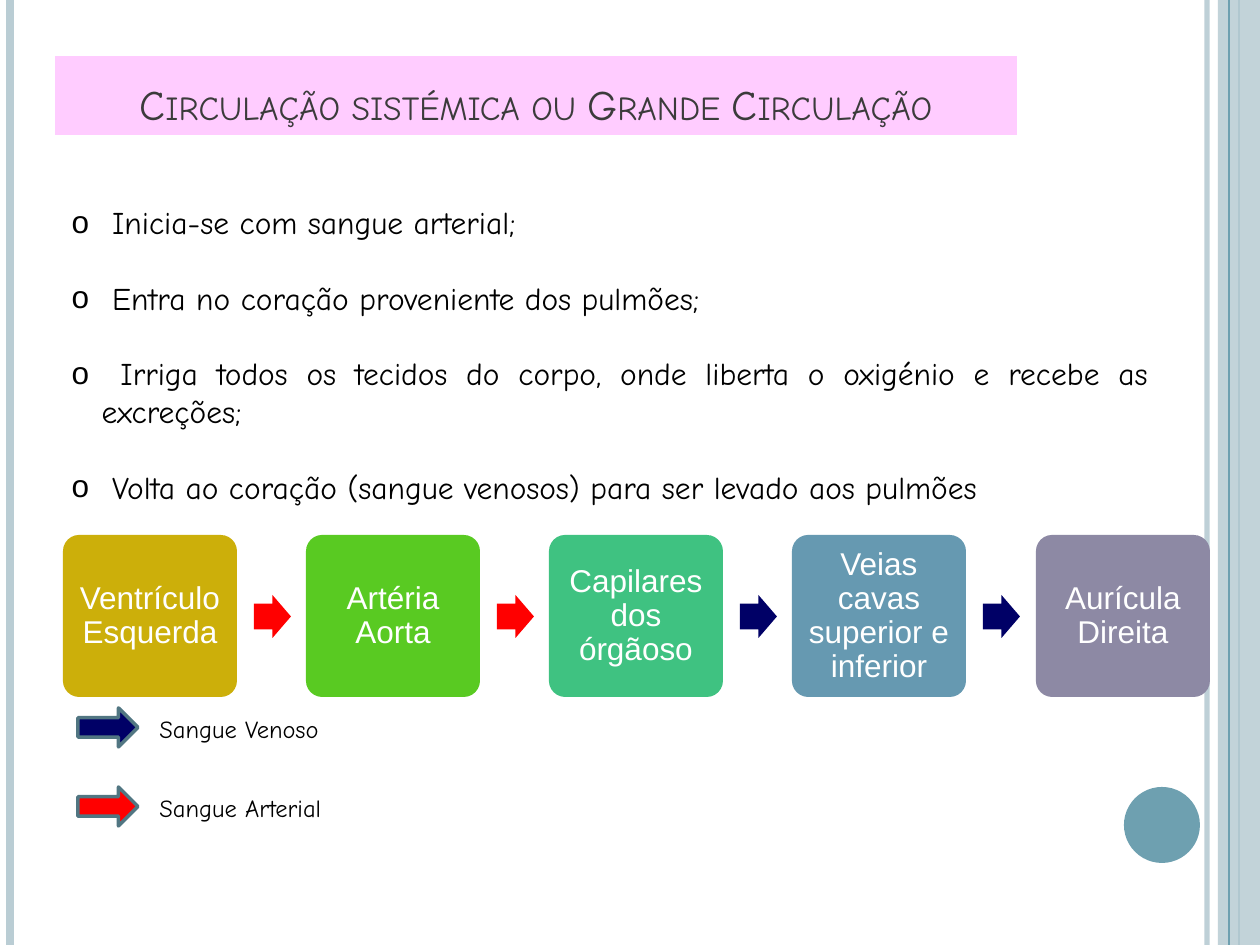
"""Build the slide on the systemic circulation."""
import dataclasses

import lxml.etree
import pptx
import pptx.dml.color
import pptx.enum.shapes
import pptx.enum.text
import pptx.oxml.ns
import pptx.util

EMU_PER_PX = 914400 / 126
SLIDE_W, SLIDE_H = 1260, 945
COLORS = {
    "pale": "BACDD4", "teal": "6EA0B0", "pink": "FFCCFF", "title": "3B3B3B",
    "black": "000000", "white": "FFFFFF", "outline": "517682",
    "arterial": "FF0000", "venous": "000066",
    "ventricle": "CCAF0A", "aorta": "59CA22", "capillaries": "3FC281",
    "cavae": "6699B1", "atrium": "8D89A4",
}
HAND_FONT, FLOW_FONT = "Comic Neue", "Arial"
SHAPES = pptx.enum.shapes.MSO_SHAPE
ALIGN = pptx.enum.text.PP_ALIGN
ANCHOR = pptx.enum.text.MSO_ANCHOR


@dataclasses.dataclass
class Box:
    left: int
    top: int
    width: int
    height: int


@dataclasses.dataclass
class Rule:
    x: int
    color: str
    weight: float
    opacity: int = 100


@dataclasses.dataclass
class Stage:
    name: str
    color: str
    blood_out: str = ""


@dataclasses.dataclass
class Key:
    label: str
    blood: str
    top: int


RULES = [Rule(1207, "pale", 3, 93), Rule(10, "pale", 4.5),
         Rule(1239, "teal", 1.5), Rule(1229, "teal", 0.75)]
STAGES = [
    Stage("Ventrículo Esquerda", "ventricle", "arterial"),
    Stage("Artéria Aorta", "aorta", "arterial"),
    Stage("Capilares dos órgãoso", "capillaries", "venous"),
    Stage("Veias cavas superior e inferior", "cavae", "venous"),
    Stage("Aurícula Direita", "atrium"),
]
KEYS = [Key("Sangue Venoso", "venous", 708), Key("Sangue Arterial", "arterial", 787)]
FACTS = [
    " Inicia-se com sangue arterial;",
    " Entra no coração proveniente dos pulmões;",
    " Irriga todos os tecidos do corpo, onde liberta o oxigénio e recebe as excreções;",
    " Volta ao coração (sangue venosos) para ser levado aos pulmões",
]


def px(length: int) -> int:
    return round(length * EMU_PER_PX)


def rgb(color: str) -> pptx.dml.color.RGBColor:
    return pptx.dml.color.RGBColor.from_string(COLORS[color])


def add_child(parent, tag: str, **attributes: str):
    return lxml.etree.SubElement(parent, pptx.oxml.ns.qn(tag), attributes)


def set_opacity(element, percent: int) -> None:
    if percent < 100:
        color = next(element.iter(pptx.oxml.ns.qn("a:srgbClr")))
        add_child(color, "a:alpha", val=str(percent * 1000))


def place(shape, box: Box) -> None:
    shape.left, shape.top = px(box.left), px(box.top)
    shape.width, shape.height = px(box.width), px(box.height)


def draw_rule(slide, rule: Rule) -> None:
    line = slide.shapes.add_connector(
        pptx.enum.shapes.MSO_CONNECTOR.STRAIGHT, px(rule.x), 0, px(rule.x), px(SLIDE_H))
    line.line.color.rgb = rgb(rule.color)
    line.line.width = pptx.util.Pt(rule.weight)
    properties = line._element.spPr
    set_opacity(properties, rule.opacity)
    add_child(properties, "a:effectLst")


def draw_shape(slide, kind, box: Box, color: str):
    shape = slide.shapes.add_shape(
        kind, px(box.left), px(box.top), px(box.width), px(box.height))
    shape.shadow.inherit = False
    shape.fill.solid()
    shape.fill.fore_color.rgb = rgb(color)
    shape.line.fill.background()
    return shape


def write(paragraph, text: str, font: str, size: int, color: str, align=ALIGN.LEFT):
    paragraph.alignment = align
    run = paragraph.add_run()
    run.text = text
    run.font.name = font
    run.font.size = pptx.util.Pt(size)
    run.font.color.rgb = rgb(color)
    return run


def draw_title(slide) -> None:
    title = slide.shapes.title
    place(title, Box(55, 56, 962, 79))
    title.fill.solid()
    title.fill.fore_color.rgb = rgb("pink")
    frame = title.text_frame
    frame.auto_size = pptx.enum.text.MSO_AUTO_SIZE.NONE
    frame.vertical_anchor = ANCHOR.BOTTOM
    run = write(frame.paragraphs[0], "Circulação sistémica ou Grande Circulação",
                HAND_FONT, 24, "title", ALIGN.CENTER)
    run.font._element.set("cap", "small")


def draw_facts(slide) -> None:
    body = slide.placeholders[1]
    place(body, Box(59, 197, 1102, 317))
    frame = body.text_frame
    frame.auto_size = pptx.enum.text.MSO_AUTO_SIZE.NONE
    for index, fact in enumerate(FACTS):
        paragraph = frame.add_paragraph() if index else frame.paragraphs[0]
        paragraph.space_before = pptx.util.Pt(21.6 if index else 0)
        write(paragraph, fact, HAND_FONT, 18, "black", ALIGN.JUSTIFY)
        properties = paragraph._p.get_or_add_pPr()
        properties.set("marL", str(px(30)))
        properties.set("indent", str(-px(30)))
        add_child(properties, "a:buFont", typeface=FLOW_FONT)
        add_child(properties, "a:buChar", char="o")


def draw_stage(slide, stage: Stage, left: int) -> None:
    card = draw_shape(slide, SHAPES.ROUNDED_RECTANGLE, Box(left, 535, 174, 162), stage.color)
    card.adjustments[0] = 0.1
    frame = card.text_frame
    frame.word_wrap = True
    frame.vertical_anchor = ANCHOR.MIDDLE
    frame.margin_left = frame.margin_right = px(9)
    frame.margin_top = frame.margin_bottom = px(9)
    frame.paragraphs[0].line_spacing = 0.9
    write(frame.paragraphs[0], stage.name, FLOW_FONT, 18, "white", ALIGN.CENTER)
    if stage.blood_out:
        flow = draw_shape(slide, SHAPES.RIGHT_ARROW, Box(left + 191, 595, 37, 43),
                          stage.blood_out)
        flow.adjustments[0] = 0.6


def draw_key(slide, key: Key) -> None:
    arrow = draw_shape(slide, SHAPES.RIGHT_ARROW, Box(78, key.top, 60, 39), key.blood)
    arrow.line.color.rgb = rgb("outline")
    arrow.line.width = pptx.util.Pt(2)
    label = slide.shapes.add_textbox(px(147), px(key.top), px(266), px(43))
    label.text_frame.word_wrap = True
    write(label.text_frame.paragraphs[0], key.label, HAND_FONT, 14, "black")


def main() -> None:
    presentation = pptx.Presentation()
    presentation.slide_width, presentation.slide_height = px(SLIDE_W), px(SLIDE_H)
    slide = presentation.slides.add_slide(presentation.slide_layouts[1])
    for rule in RULES[:3]:
        draw_rule(slide, rule)
    band = draw_shape(slide, SHAPES.RECTANGLE, Box(1218, 0, 42, SLIDE_H), "pale")
    set_opacity(band._element.spPr, 87)
    draw_rule(slide, RULES[3])
    draw_shape(slide, SHAPES.OVAL, Box(1124, 787, 76, 76), "teal")
    draw_title(slide)
    draw_facts(slide)
    for index, stage in enumerate(STAGES):
        draw_stage(slide, stage, 63 + index * 973 // 4)
    for key in KEYS:
        draw_key(slide, key)
    presentation.save("out.pptx")


if __name__ == "__main__":
    main()
